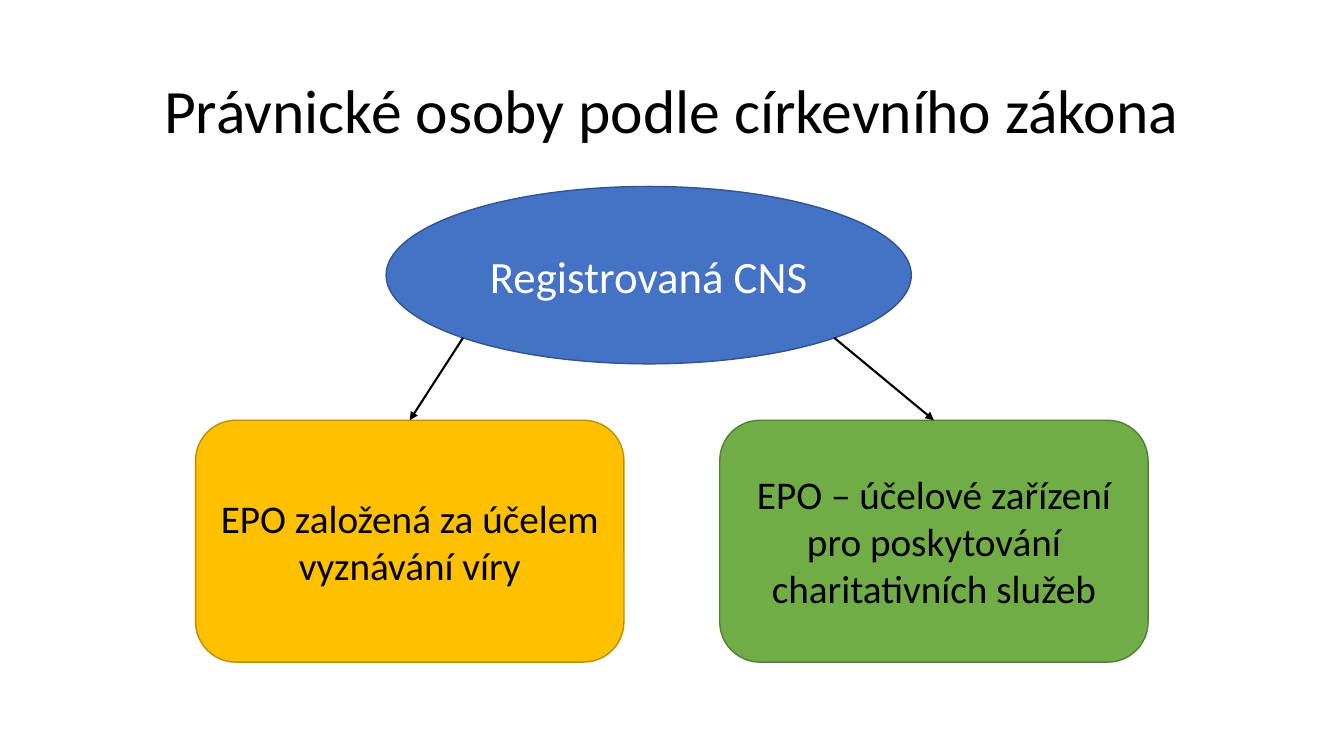
"""Build a slide showing the legal persons recognised by the church act."""
import math
from dataclasses import dataclass

import lxml.etree
import pptx
import pptx.dml.color
import pptx.enum.shapes
import pptx.enum.text
import pptx.oxml.ns
import pptx.util

TITLE = "Právnické osoby podle církevního zákona"
PARENT = "Registrovaná CNS"
CHILDREN = [
    ("EPO založená za účelem vyznávání víry", "FFC000", "BD8E00"),
    ("EPO – účelové zařízení pro poskytování charitativních služeb", "70AD47", "538035"),
]


@dataclass(frozen=True)
class Theme:
    """Colours, font and type sizes."""
    font: str = "Calibri"
    dark: str = "000000"
    light: str = "FFFFFF"
    parent_fill: str = "4472C4"
    parent_line: str = "325491"
    title_size: int = 44
    parent_size: int = 32
    child_size: int = 28


THEME = Theme()
SLIDE_SIZE = (960, 540)
TITLE_AREA = (66, 28.8, 828, 104.4)
PARENT_AREA = (275.8, 133.2, 375.1, 126.7)
CHILD_LEFT, CHILD_TOP, CHILD_WIDTH, CHILD_HEIGHT = 139.7, 300.2, 306, 172.8
CHILD_GAP = 68.4

SHAPES = pptx.enum.shapes.MSO_SHAPE
Pt = pptx.util.Pt


def rgb(color):
    """Return a colour object for a hex string."""
    return pptx.dml.color.RGBColor.from_string(color)


def write(shape, text, size, color):
    """Put one centred paragraph into a shape."""
    frame = shape.text_frame
    frame.word_wrap = True
    frame.vertical_anchor = pptx.enum.text.MSO_ANCHOR.MIDDLE
    para = frame.paragraphs[0]
    para.text = text
    para.alignment = pptx.enum.text.PP_ALIGN.CENTER
    para.font.name = THEME.font
    para.font.size = Pt(size)
    para.font.color.rgb = rgb(color)
    return para


def add_node(slide, preset, area, fill, line):
    """Add a filled and outlined shape."""
    node = slide.shapes.add_shape(preset, *map(Pt, area))
    node.shadow.inherit = False
    node.fill.solid()
    node.fill.fore_color.rgb = rgb(fill)
    node.line.color.rgb = rgb(line)
    node.line.width = Pt(1)
    return node


def add_arrow(slide, start, box):
    """Draw an arrow from a point to the top middle of a box."""
    arrow = slide.shapes.add_connector(
        pptx.enum.shapes.MSO_CONNECTOR.STRAIGHT, *map(Pt, start),
        box.left + box.width // 2, box.top)
    arrow.end_connect(box, 0)
    arrow.line.color.rgb = rgb(THEME.dark)
    arrow.line.width = Pt(1.5)
    qn = pptx.oxml.ns.qn
    lxml.etree.SubElement(arrow.line._get_or_add_ln(), qn("a:tailEnd"), type="triangle")
    lxml.etree.SubElement(arrow._element.spPr, qn("a:effectLst"))


def main():
    """Build and save the deck."""
    deck = pptx.Presentation()
    deck.slide_width, deck.slide_height = map(Pt, SLIDE_SIZE)
    slide = deck.slides.add_slide(deck.slide_layouts[6])

    title = slide.shapes.add_textbox(*map(Pt, TITLE_AREA))
    write(title, TITLE, THEME.title_size, THEME.dark).line_spacing = 0.9

    parent = add_node(slide, SHAPES.OVAL, PARENT_AREA, THEME.parent_fill, THEME.parent_line)
    write(parent, PARENT, THEME.parent_size, THEME.light)

    left, top, width, height = PARENT_AREA
    reach = math.sqrt(0.5) / 2
    for index, (text, fill, line) in enumerate(CHILDREN):
        child_left = CHILD_LEFT + index * (CHILD_WIDTH + CHILD_GAP)
        area = (child_left, CHILD_TOP, CHILD_WIDTH, CHILD_HEIGHT)
        child = add_node(slide, SHAPES.ROUNDED_RECTANGLE, area, fill, line)
        write(child, text, THEME.child_size, THEME.dark)
        side = 2 * index - 1
        start = (left + width * (0.5 + side * reach), top + height * (0.5 + reach))
        add_arrow(slide, start, child)

    deck.save("out.pptx")


if __name__ == "__main__":
    main()
